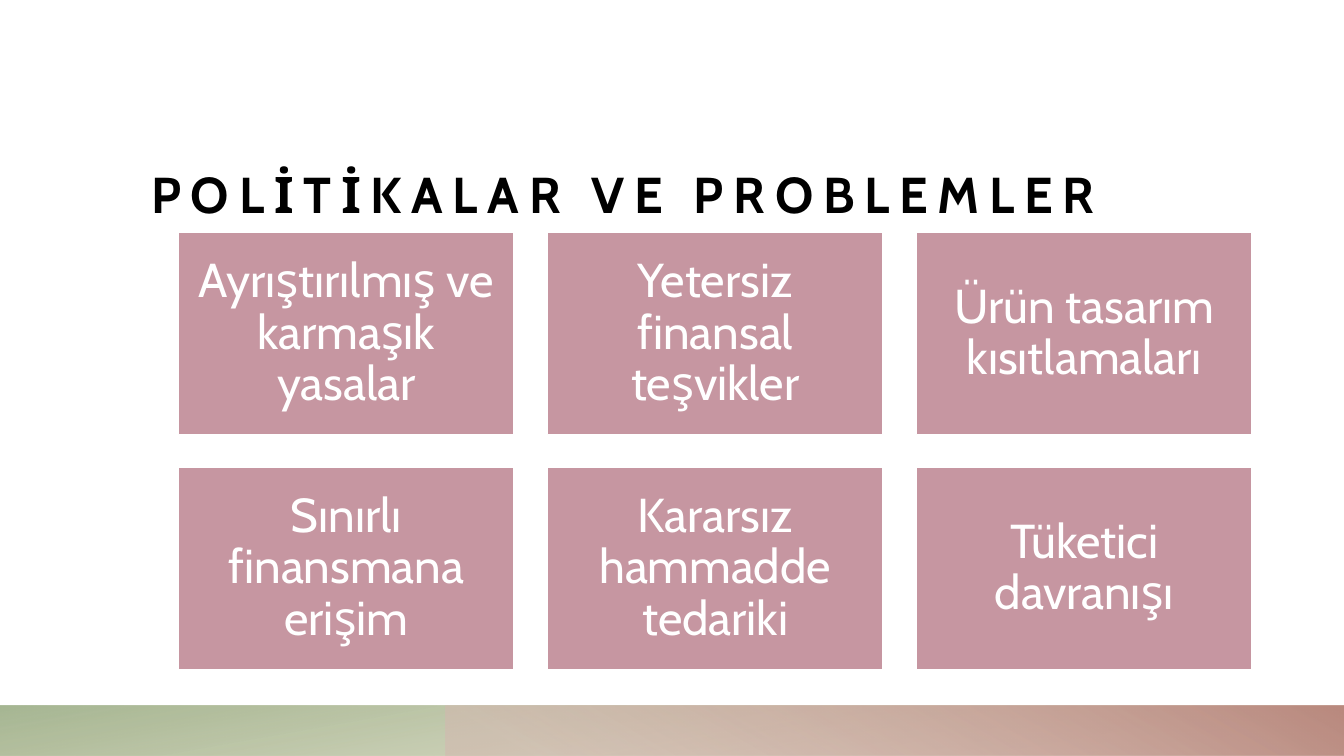
from lxml import etree
from pptx import Presentation
from pptx.dml.color import RGBColor
from pptx.enum.shapes import MSO_SHAPE
from pptx.enum.text import MSO_ANCHOR, PP_ALIGN
from pptx.oxml.ns import qn
from pptx.util import Inches, Pt

RECTANGLE = MSO_SHAPE.RECTANGLE
MIDDLE, BOTTOM = MSO_ANCHOR.MIDDLE, MSO_ANCHOR.BOTTOM
LEFT, CENTER = PP_ALIGN.LEFT, PP_ALIGN.CENTER

SLIDE_WIDTH, SLIDE_HEIGHT = 13.33, 7.5
FOOTER_TOP, FOOTER_HEIGHT = 7, 0.5
CARD_WIDTH, CARD_HEIGHT, CARD_GAP = 3.33, 2, 0.33
GRID_LEFT, GRID_TOP, COLUMNS = 1.77, 2.31, 3

PROBLEMS = [
    "Ayrıştırılmış ve karmaşık yasalar",
    "Yetersiz finansal teşvikler",
    "Ürün tasarım kısıtlamaları",
    "Sınırlı finansmana erişim",
    "Kararsız hammadde tedariki",
    "Tüketici davranışı",
]


def color(hex_string):
    return RGBColor.from_string(hex_string)


def write_text(shape, text, size, font="Cabin", fill="000000", bold=False,
               align=LEFT, anchor=MIDDLE, inset=0, line_spacing=1.0,
               space_after=0, tracking=0):
    """Fill a shape with one formatted paragraph; tracking is in points."""
    frame = shape.text_frame
    frame.word_wrap = True
    frame.vertical_anchor = anchor
    frame.margin_left = frame.margin_right = Inches(inset)
    frame.margin_top = frame.margin_bottom = Inches(inset)
    para = frame.paragraphs[0]
    para.alignment = align
    para.line_spacing = line_spacing
    para.space_after = Pt(space_after)
    span = para.add_run()
    span.text = text
    span.font.name = font
    span.font.size = Pt(size)
    span.font.bold = bold
    span.font.color.rgb = color(fill)
    if tracking:
        span.font._element.set("spc", str(tracking * 100))


class SlideBuilder:
    card_fill = "C696A1"
    light = "FFFFFF"

    def __init__(self, page):
        self.page = page

    def rectangle(self, left, top, width, height):
        shape = self.page.shapes.add_shape(
            RECTANGLE, Inches(left), Inches(top), Inches(width), Inches(height))
        shape.shadow.inherit = False
        return shape

    def footer_band(self, left, stops, angle, rotation=0):
        """Add a mirrored gradient band; stops are (percent, hex, opacity)."""
        band = self.rectangle(left, FOOTER_TOP, SLIDE_WIDTH - left, FOOTER_HEIGHT)
        band.rotation = rotation
        band.element.spPr.find(qn("a:xfrm")).set("flipH", "1")
        band.line.fill.background()
        band.fill.gradient()
        band.fill.gradient_angle = 360 - angle
        for stop, (percent, hex_string, _) in zip(band.fill.gradient_stops, stops):
            stop.position = percent / 100
            stop.color.rgb = color(hex_string)
        stop_colors = band.element.spPr.iter(qn("a:srgbClr"))
        for stop_color, (_, _, opacity) in zip(stop_colors, stops):
            alpha = etree.SubElement(stop_color, qn("a:alpha"))
            alpha.set("val", str(opacity * 1000))

    def title(self, text):
        box = self.page.shapes.add_textbox(
            Inches(1.5), Inches(0.87), Inches(11.2), Inches(1.35))
        write_text(box, text, 36, bold=True, anchor=BOTTOM, tracking=7)

    def card(self, text, left, top):
        card = self.rectangle(left, top, CARD_WIDTH, CARD_HEIGHT)
        card.fill.solid()
        card.fill.fore_color.rgb = color(self.card_fill)
        card.line.color.rgb = color(self.light)
        card.line.width = Pt(1)
        write_text(card, text, 34, fill=self.light, align=CENTER, inset=0.14,
                   line_spacing=0.9, space_after=12)


def main():
    deck = Presentation()
    deck.slide_width, deck.slide_height = Inches(SLIDE_WIDTH), Inches(SLIDE_HEIGHT)
    builder = SlideBuilder(deck.slides.add_slide(deck.slide_layouts[6]))

    builder.footer_band(0, [(14, "A5A772", 28), (100, "97AA80", 85)], 100, rotation=180)
    builder.footer_band(4.42, [(9, "D6B9B2", 55), (99, "BA8A7F", 100)], 240)
    builder.title("POLİTİKALAR VE PROBLEMLER")
    for index, problem in enumerate(PROBLEMS):
        row, column = divmod(index, COLUMNS)
        builder.card(problem,
                     GRID_LEFT + column * (CARD_WIDTH + CARD_GAP),
                     GRID_TOP + row * (CARD_HEIGHT + CARD_GAP))

    deck.save("out.pptx")


if __name__ == "__main__":
    main()
